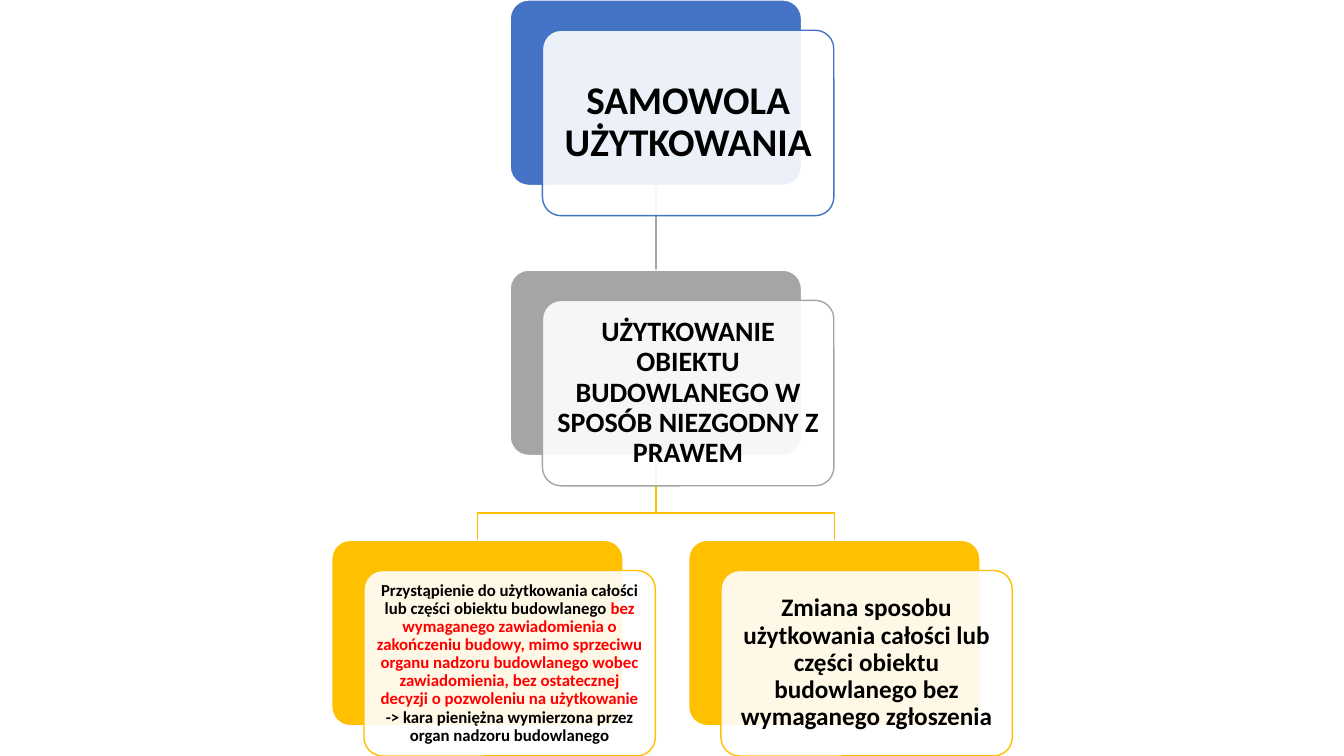
import dataclasses

import lxml.etree
import pptx
import pptx.dml.color
import pptx.enum.shapes
import pptx.enum.text
import pptx.oxml.ns
import pptx.util


@dataclasses.dataclass(frozen=True)
class Theme:
    font: str = "Calibri"
    paper: str = "FFFFFF"
    ink: str = "000000"
    alert: str = "FF0000"
    blue: str = "4472C4"
    gray: str = "A5A5A5"
    gold: str = "FFC000"
    title: int = 28
    heading: int = 20
    body: int = 18
    detail: int = 12
    line: int = 1


@dataclasses.dataclass(frozen=True)
class Grid:
    """Lengths in inches; a card spans almost two columns."""
    left: float = 3.29
    column: float = 1.77
    row: float = 2.68
    card_width: float = 2.89
    card_height: float = 1.84
    shift_x: float = 0.32
    shift_y: float = 0.3
    bend: float = 0.57

    def corner(self, column, row):
        return self.left + column * self.column, row * self.row

    def foot(self, column, row):
        x, y = self.corner(column, row)
        return x + self.card_width / 2, y + self.card_height

    def head(self, column, row):
        x, y = self.corner(column, row)
        return x + self.card_width / 2, y


def rgb(color):
    return pptx.dml.color.RGBColor.from_string(color)


class Chart:
    def __init__(self, slide, theme, grid):
        self.shapes = slide.shapes
        self.theme = theme
        self.grid = grid

    def outline(self, shape, color):
        shape.line.color.rgb = rgb(color)
        shape.line.width = pptx.util.Pt(self.theme.line)

    def stem(self, parent, child, color):
        """Straight line from a card down to the card below it."""
        ends = [pptx.util.Inches(v) for v in self.grid.foot(*parent) + self.grid.head(*child)]
        stem = self.shapes.add_connector(pptx.enum.shapes.MSO_CONNECTOR.STRAIGHT, *ends)
        self.outline(stem, color)
        lxml.etree.SubElement(stem._element.spPr, pptx.oxml.ns.qn("a:effectLst"))

    def branch(self, parent, child, color):
        """Bent line from a card to a card below and to one side."""
        (x1, y1), (x2, y2) = self.grid.foot(*parent), self.grid.head(*child)
        bend = y1 + self.grid.bend
        start, *rest = [(pptx.util.Inches(x), pptx.util.Inches(y))
                        for x, y in ((x1, y1), (x1, bend), (x2, bend), (x2, y2))]
        builder = self.shapes.build_freeform(*start)
        builder.add_line_segments(rest, close=False)
        branch = builder.convert_to_shape()
        branch.shadow.inherit = False
        branch.fill.background()
        self.outline(branch, color)

    def panel(self, x, y, fill, line):
        size = self.grid.card_width, self.grid.card_height
        panel = self.shapes.add_shape(
            pptx.enum.shapes.MSO_SHAPE.ROUNDED_RECTANGLE,
            *(pptx.util.Inches(v) for v in (x, y, *size)))
        panel.adjustments[0] = 0.1
        panel.shadow.inherit = False
        panel.fill.solid()
        panel.fill.fore_color.rgb = rgb(fill)
        self.outline(panel, line)
        return panel

    def card(self, column, row, color, size, inset, runs):
        """Coloured panel with a translucent labelled panel in front."""
        x, y = self.grid.corner(column, row)
        self.panel(x, y, color, self.theme.paper)
        label = self.panel(x + self.grid.shift_x, y + self.grid.shift_y, self.theme.paper, color)
        paper = label._element.spPr.find(".//" + pptx.oxml.ns.qn("a:srgbClr"))
        lxml.etree.SubElement(paper, pptx.oxml.ns.qn("a:alpha"), val="90000")
        frame = label.text_frame
        frame.word_wrap = True
        frame.vertical_anchor = pptx.enum.text.MSO_ANCHOR.MIDDLE
        frame.margin_left = frame.margin_right = pptx.util.Inches(inset)
        frame.margin_top = frame.margin_bottom = pptx.util.Inches(inset)
        paragraph = frame.paragraphs[0]
        paragraph.alignment = pptx.enum.text.PP_ALIGN.CENTER
        paragraph.line_spacing = 0.9
        for text, ink in runs:
            run = paragraph.add_run()
            run.text = text
            run.font.name = self.theme.font
            run.font.size = pptx.util.Pt(size)
            run.font.bold = True
            run.font.color.rgb = rgb(ink)


def main():
    deck = pptx.Presentation()
    deck.slide_width = pptx.util.Inches(13.33)
    deck.slide_height = pptx.util.Inches(7.5)
    theme = Theme()
    chart = Chart(deck.slides.add_slide(deck.slide_layouts[6]), theme, Grid())

    offence, misuse, occupancy, conversion = (1, 0), (1, 1), (0, 2), (2, 2)
    for child in (conversion, occupancy):
        chart.branch(misuse, child, theme.gold)
    chart.stem(offence, misuse, theme.gray)

    chart.card(*offence, theme.blue, theme.title, 0.12,
               [("SAMOWOLA UŻYTKOWANIA", theme.ink)])
    chart.card(*misuse, theme.gray, theme.heading, 0.08,
               [("UŻYTKOWANIE OBIEKTU BUDOWLANEGO W SPOSÓB NIEZGODNY Z PRAWEM", theme.ink)])
    chart.card(*occupancy, theme.gold, theme.detail, 0.05, [
        ("Przystąpienie do użytkowania całości lub części obiektu budowlanego ", theme.ink),
        ("bez wymaganego zawiadomienia o zakończeniu budowy, mimo sprzeciwu organu "
         "nadzoru budowlanego wobec zawiadomienia, bez ostatecznej decyzji o "
         "pozwoleniu na użytkowanie ", theme.alert),
        ("-> kara pieniężna wymierzona przez organ nadzoru budowlanego", theme.ink)])
    chart.card(*conversion, theme.gold, theme.body, 0.07,
               [("Zmiana sposobu użytkowania całości lub części obiektu budowlanego "
                 "bez wymaganego zgłoszenia", theme.ink)])
    deck.save("out.pptx")


if __name__ == "__main__":
    main()
